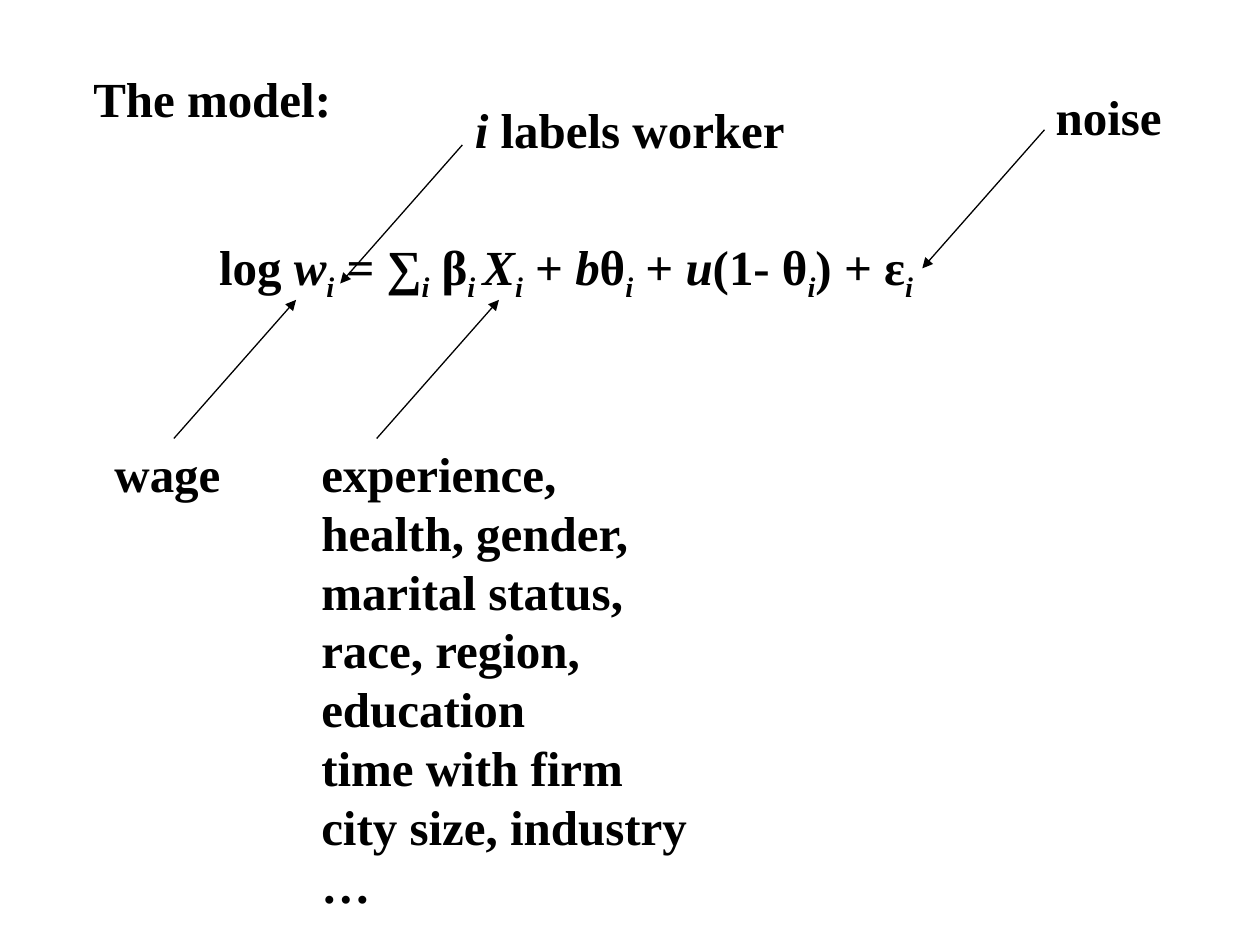
"""Build the wage model slide."""
import pptx
import pptx.dml.color
import pptx.enum.shapes
import pptx.enum.text
import pptx.oxml.ns
import pptx.util
from lxml import etree

Inches = pptx.util.Inches
Pt = pptx.util.Pt
qn = pptx.oxml.ns.qn

INK = "000000"
FONT = {"name": "Times New Roman", "size": Pt(28), "bold": True}
FRAME = {
    "auto_size": pptx.enum.text.MSO_AUTO_SIZE.NONE,
    "vertical_anchor": pptx.enum.text.MSO_ANCHOR.TOP,
}
PARAGRAPH = {
    "alignment": pptx.enum.text.PP_ALIGN.LEFT,
    "line_spacing": Pt(33.6),
    "space_before": Pt(0),
    "space_after": Pt(0),
}
ARROW_WIDTH, ARROW_HEIGHT = 0.97, 1.1

FACTORS = [
    "experience,", "health, gender,", "marital status,", "race, region,",
    "education", "time with firm", "city size, industry", "…",
]
EQUATION = [
    ("log ", ""), ("w", "italic"), ("i", "sub"), (" = ∑", ""), ("i", "sub"),
    (" β", ""), ("i ", "sub"), ("X", "italic"), ("i", "sub"), (" + ", ""),
    ("b", "italic"), ("θ", ""), ("i", "sub"), (" + ", ""), ("u", "italic"),
    ("(1- θ", ""), ("i", "sub"), (") + ε", ""), ("i", "sub"),
]


def color(value):
    """Return the colour for a hex string."""
    return pptx.dml.color.RGBColor.from_string(value)


def apply(target, values):
    """Set each attribute in values on target."""
    for name, value in values.items():
        setattr(target, name, value)


def place(shape, left, top, width, height):
    """Move and size a shape, in inches."""
    apply(shape, {"left": Inches(left), "top": Inches(top),
                  "width": Inches(width), "height": Inches(height)})


def add_run(p, text, style):
    """Add a plain, italic or subscript run."""
    r = p.add_run()
    r.text = text
    apply(r.font, FONT)
    r.font.italic = style != ""
    r.font.color.rgb = color(INK)
    if style == "sub":
        r._r.get_or_add_rPr().set("baseline", "-25000")


def write(shape, lines, wrap=True):
    """Fill a shape with lines of styled runs."""
    tf = shape.text_frame
    apply(tf, FRAME)
    tf.word_wrap = wrap
    for index, line in enumerate(lines):
        p = tf.add_paragraph() if index else tf.paragraphs[0]
        apply(p, PARAGRAPH)
        for text, style in line:
            add_run(p, text, style)


def remove_bullets(shape):
    """Turn off bullets and indents in a list."""
    for p in shape.text_frame.paragraphs:
        pPr = p._p.get_or_add_pPr()
        pPr.set("marL", "0")
        pPr.set("indent", "0")
        etree.SubElement(pPr, qn("a:buNone"))


def add_text(s, runs, left, top, width, wrap=False):
    """Add a one-line text box."""
    box = s.shapes.add_textbox(Inches(left), Inches(top), Inches(width), Inches(0.57))
    write(box, [runs], wrap)


def add_arrow(s, left, top, upward):
    """Add a diagonal arrow, pointing up right or down left."""
    low = (Inches(left), Inches(top + ARROW_HEIGHT))
    high = (Inches(left + ARROW_WIDTH), Inches(top))
    start, end = (low, high) if upward else (high, low)
    line = s.shapes.add_connector(pptx.enum.shapes.MSO_CONNECTOR.STRAIGHT, *start, *end)
    line.line.width = Pt(0.75)
    line.line.color.rgb = color(INK)
    etree.SubElement(line.line._get_or_add_ln(), qn("a:tailEnd"), type="triangle")
    etree.SubElement(line._element.spPr, qn("a:effectLst"))


def main():
    """Build and save the slide."""
    prs = pptx.Presentation()
    prs.slide_width, prs.slide_height = Inches(10), Inches(7.5)
    s = prs.slides.add_slide(prs.slide_layouts[1])

    title, body = s.shapes.title, s.placeholders[1]
    place(title, 0.64, 0.49, 2.9, 0.57)
    write(title, [[("The model:", "")]])
    place(body, 2.45, 3.47, 3.13, 3.87)
    write(body, [[(factor, "")] for factor in FACTORS])
    remove_bullets(body)

    add_text(s, EQUATION, 1.64, 1.89, 7.98, wrap=True)
    add_text(s, [("i", "italic"), (" labels worker", "")], 3.67, 0.74, 2.69)
    add_text(s, [("wage", "")], 0.81, 3.47, 1.05)
    add_text(s, [("noise", "")], 8.28, 0.64, 1.05)

    for left, top, upward in [(1.38, 2.38, True), (2.7, 1.15, False),
                              (2.99, 2.38, True), (7.32, 1.03, False)]:
        add_arrow(s, left, top, upward)
    prs.save("out.pptx")


if __name__ == "__main__":
    main()
